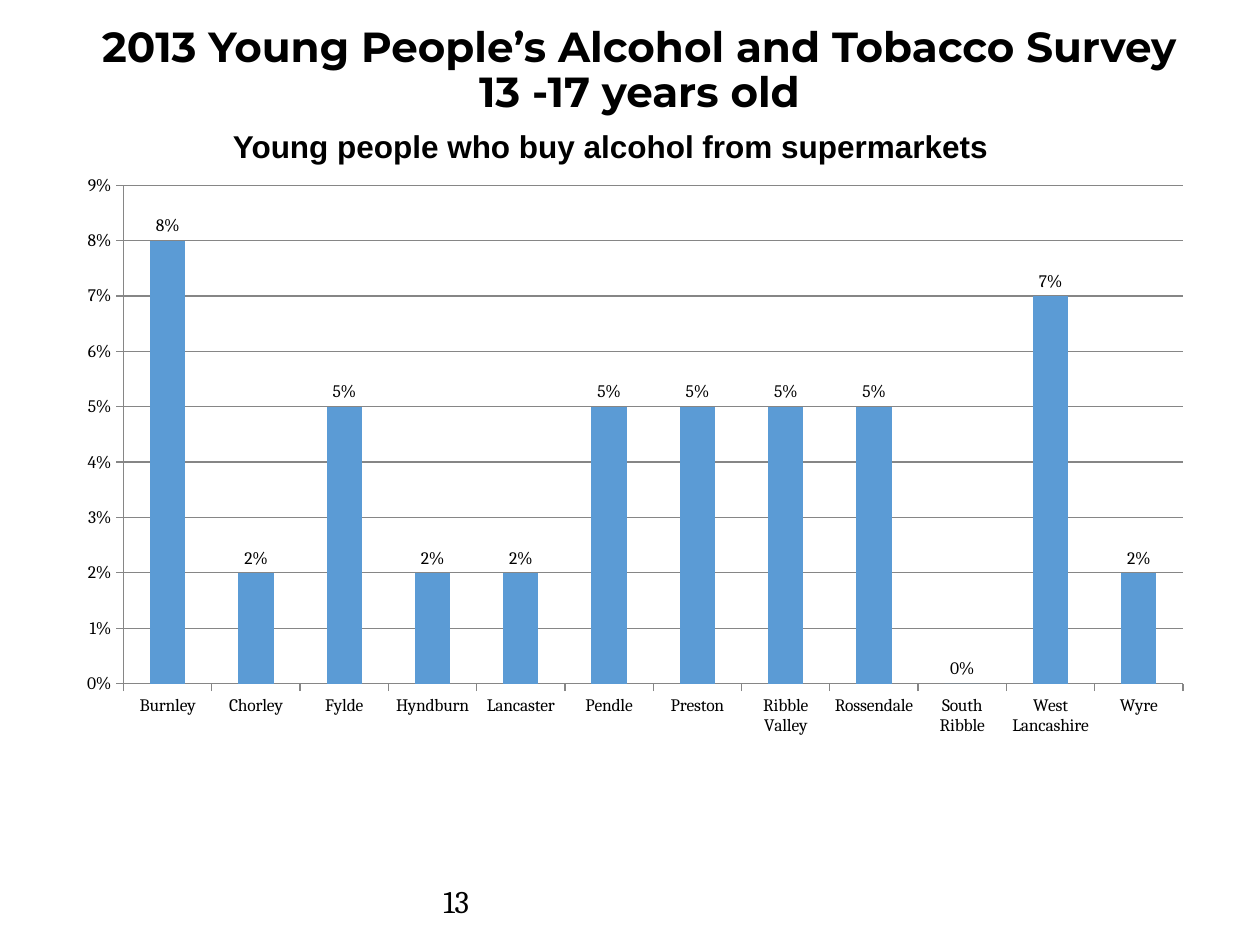
from pptx import Presentation
from pptx.chart.data import CategoryChartData
from pptx.dml.color import RGBColor
from pptx.enum.chart import XL_CHART_TYPE, XL_LABEL_POSITION, XL_TICK_MARK
from pptx.enum.text import MSO_ANCHOR, PP_ALIGN
from pptx.util import Pt

COLORS = {"text": "000000", "bar": "5B9BD5", "grid": "868686"}

deck = Presentation()
deck.slide_width, deck.slide_height = Pt(720), Pt(540)
slide = deck.slides.add_slide(deck.slide_layouts[6])
column, row = deck.slide_width / 100, deck.slide_height / 75


def place(left, top, width, height):
    return int(left * column), int(top * row), int(width * column), int(height * row)


def style(font, face, size, bold=False):
    for name, value in {"name": face, "size": Pt(size), "bold": bold}.items():
        setattr(font, name, value)
    font.color.rgb = RGBColor.from_string(COLORS["text"])


buyers = {
    "Burnley": 0.08,
    "Chorley": 0.02,
    "Fylde": 0.05,
    "Hyndburn": 0.02,
    "Lancaster": 0.02,
    "Pendle": 0.05,
    "Preston": 0.05,
    "Ribble Valley": 0.05,
    "Rossendale": 0.05,
    "South Ribble": 0,
    "West Lancashire": 0.07,
    "Wyre": 0.02,
}
survey = CategoryChartData(number_format="0%")
survey.categories = list(buyers)
survey.add_series("Series 1", list(buyers.values()))
chart = slide.shapes.add_chart(
    XL_CHART_TYPE.COLUMN_CLUSTERED, *place(5.1, 13, 90.6, 46.3), survey
).chart
chart.has_title = False
chart.has_legend = False
style(chart.font, "Cambria", 10)

shares = chart.value_axis
shares.minimum_scale, shares.maximum_scale, shares.major_unit = 0, 0.09, 0.01
shares.has_major_gridlines = True
shares.tick_labels.number_format = "0%"
shares.tick_labels.number_format_is_linked = False
for axis in (shares, chart.category_axis):
    axis.major_tick_mark = XL_TICK_MARK.OUTSIDE
for line in (shares.format.line, chart.category_axis.format.line,
             shares.major_gridlines.format.line):
    line.color.rgb = RGBColor.from_string(COLORS["grid"])
    line.width = Pt(0.75)

bars = chart.plots[0]
bars.gap_width = 150
bars.vary_by_categories = False
bars.series[0].format.fill.solid()
bars.series[0].format.fill.fore_color.rgb = RGBColor.from_string(COLORS["bar"])
bars.has_data_labels = True
label_format = {
    "show_value": True,
    "number_format": "0%",
    "number_format_is_linked": False,
    "position": XL_LABEL_POSITION.OUTSIDE_END,
}
for name, value in label_format.items():
    setattr(bars.data_labels, name, value)
style(bars.data_labels.font, "Cambria", 10)

texts = [
    ("13", (34.2, 69.5, 31.7, 4), "Cambria", 18, False, PP_ALIGN.LEFT, 1),
    ("Young people who buy alcohol from supermarkets", (17.5, 9.6, 65.2, 4),
     "Arial", 18, True, PP_ALIGN.LEFT, 1),
    ("2013 Young People’s Alcohol and Tobacco Survey\v13 -17 years old",
     (3.6, 1.6, 94.3, 10.6), "Montserrat", 24, True, PP_ALIGN.CENTER, 0.9),
]
for wording, area, face, size, bold, alignment, spacing in texts:
    frame = slide.shapes.add_textbox(*place(*area)).text_frame
    frame.word_wrap = True
    frame.vertical_anchor = MSO_ANCHOR.TOP
    paragraph = frame.paragraphs[0]
    paragraph.text = wording
    paragraph.alignment = alignment
    paragraph.line_spacing = spacing
    for run in paragraph.runs:
        style(run.font, face, size, bold)

deck.save("out.pptx")
